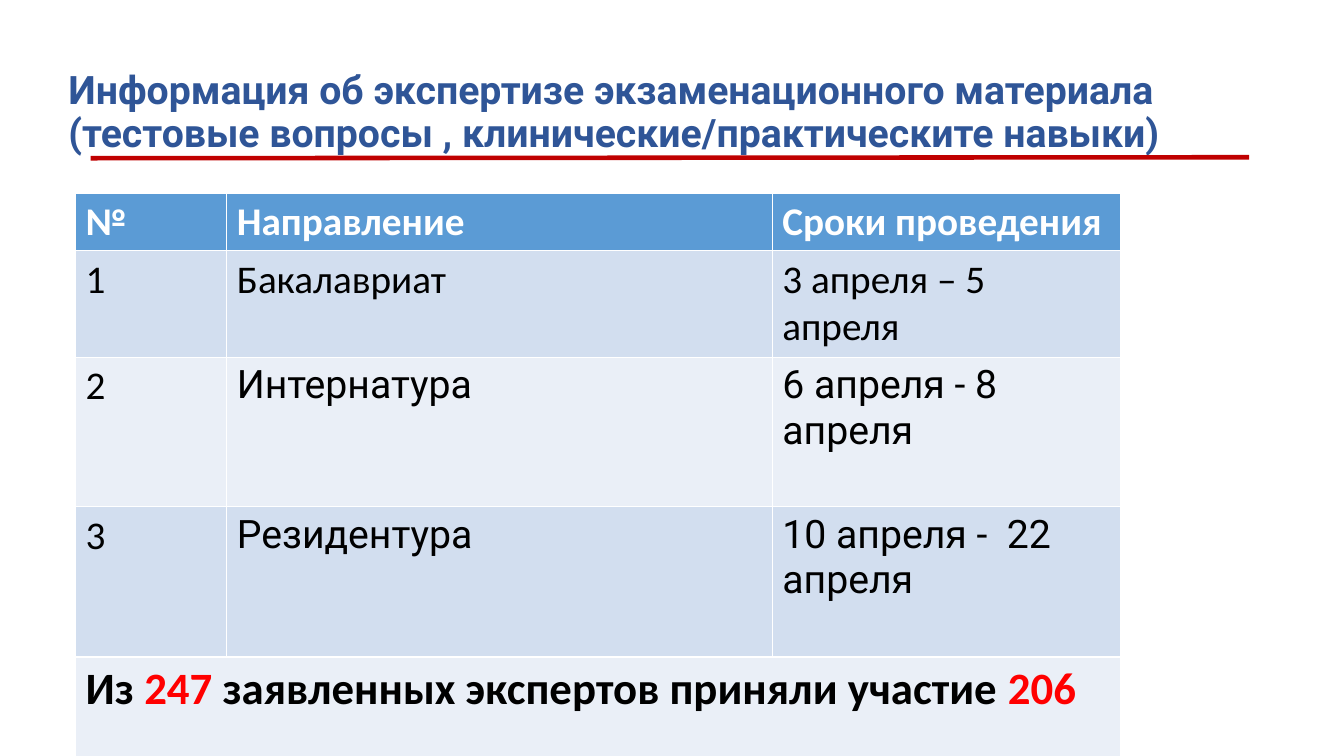
import pptx
import pptx.dml.color
import pptx.enum.shapes
import pptx.enum.text
import pptx.oxml
import pptx.util
from pptx.util import Inches

BLACK, WHITE, RED = "000000", "FFFFFF", "FF0000"
HEADER_FILL, BAND_FILLS = "5B9BD5", ("D2DEEF", "EAEFF7")

COLUMN_WIDTHS = (1.5, 5.41, 3.45)
ROW_HEIGHTS = (0.56, 1.06, 1.48, 1.49, 1.05)
HEADINGS = ("№", "Направление", "Сроки проведения")
STAGES = (
    ("1", "Бакалавриат", "3 апреля – 5 апреля", "Calibri"),
    ("2", "Интернатура", "6 апреля - 8 апреля", "Roboto"),
    ("3", "Резидентура", "10 апреля -  22 апреля", "Roboto"),
)
SUMMARY = (
    ("Из ", BLACK),
    ("247", RED),
    (" заявленных экспертов приняли участие ", BLACK),
    ("206", RED),
)


def rgb(hex_color):
    return pptx.dml.color.RGBColor.from_string(hex_color)


def add_run(paragraph, text, color, font="Calibri", size=28, bold=False):
    run = paragraph.add_run()
    run.text = text
    run.font.name = font
    run.font.size = pptx.util.Pt(size)
    run.font.bold = bold
    run.font.color.rgb = rgb(color)


def add_title(slide, text):
    title = slide.shapes.add_textbox(Inches(0.58), Inches(0.4), Inches(11.83), Inches(1.45))
    frame = title.text_frame
    frame.word_wrap = True
    frame.vertical_anchor = pptx.enum.text.MSO_ANCHOR.MIDDLE
    paragraph = frame.paragraphs[0]
    paragraph.line_spacing = 0.9
    add_run(paragraph, text, "2F5597", "Roboto", bold=True)


def add_underline(slide):
    underline = slide.shapes.add_connector(
        pptx.enum.shapes.MSO_CONNECTOR.STRAIGHT,
        Inches(0.9), Inches(1.57), Inches(12.39), Inches(1.56))
    underline.line.color.rgb = rgb("C00000")
    underline.line.width = pptx.util.Pt(3.25)
    effects = pptx.oxml.parse_xml(
        '<a:effectLst xmlns:a="http://schemas.openxmlformats.org/drawingml/2006/main"/>')
    underline.element.spPr.append(effects)


def fill_cell(cell, color):
    cell.fill.solid()
    cell.fill.fore_color.rgb = rgb(color)


def add_schedule(slide):
    schedule = slide.shapes.add_table(
        len(ROW_HEIGHTS), len(COLUMN_WIDTHS), Inches(0.75), Inches(1.92),
        Inches(sum(COLUMN_WIDTHS)), Inches(sum(ROW_HEIGHTS))).table
    for column, width in zip(schedule.columns, COLUMN_WIDTHS):
        column.width = Inches(width)
    for index, (row, height) in enumerate(zip(schedule.rows, ROW_HEIGHTS)):
        row.height = Inches(height)
        for cell in row.cells:
            fill_cell(cell, BAND_FILLS[(index - 1) % 2] if index else HEADER_FILL)

    for column, heading in enumerate(HEADINGS):
        add_run(schedule.cell(0, column).text_frame.paragraphs[0], heading, WHITE, bold=True)
    for row, (number, stage, dates, font) in enumerate(STAGES, start=1):
        for column, (text, face) in enumerate(((number, "Calibri"), (stage, font), (dates, font))):
            add_run(schedule.cell(row, column).text_frame.paragraphs[0], text, BLACK, face)

    last_row = len(ROW_HEIGHTS) - 1
    summary = schedule.cell(last_row, 0)
    summary.merge(schedule.cell(last_row, len(COLUMN_WIDTHS) - 1))
    for text, color in SUMMARY:
        add_run(summary.text_frame.paragraphs[0], text, color, size=32, bold=True)


def main():
    presentation = pptx.Presentation()
    presentation.slide_width = Inches(13.33)
    presentation.slide_height = Inches(7.5)
    slide = presentation.slides.add_slide(presentation.slide_layouts[6])
    add_title(slide, "Информация об экспертизе экзаменационного материала "
                     "(тестовые вопросы , клинические/практическите навыки)")
    add_underline(slide)
    add_schedule(slide)
    presentation.save("out.pptx")


if __name__ == "__main__":
    main()
